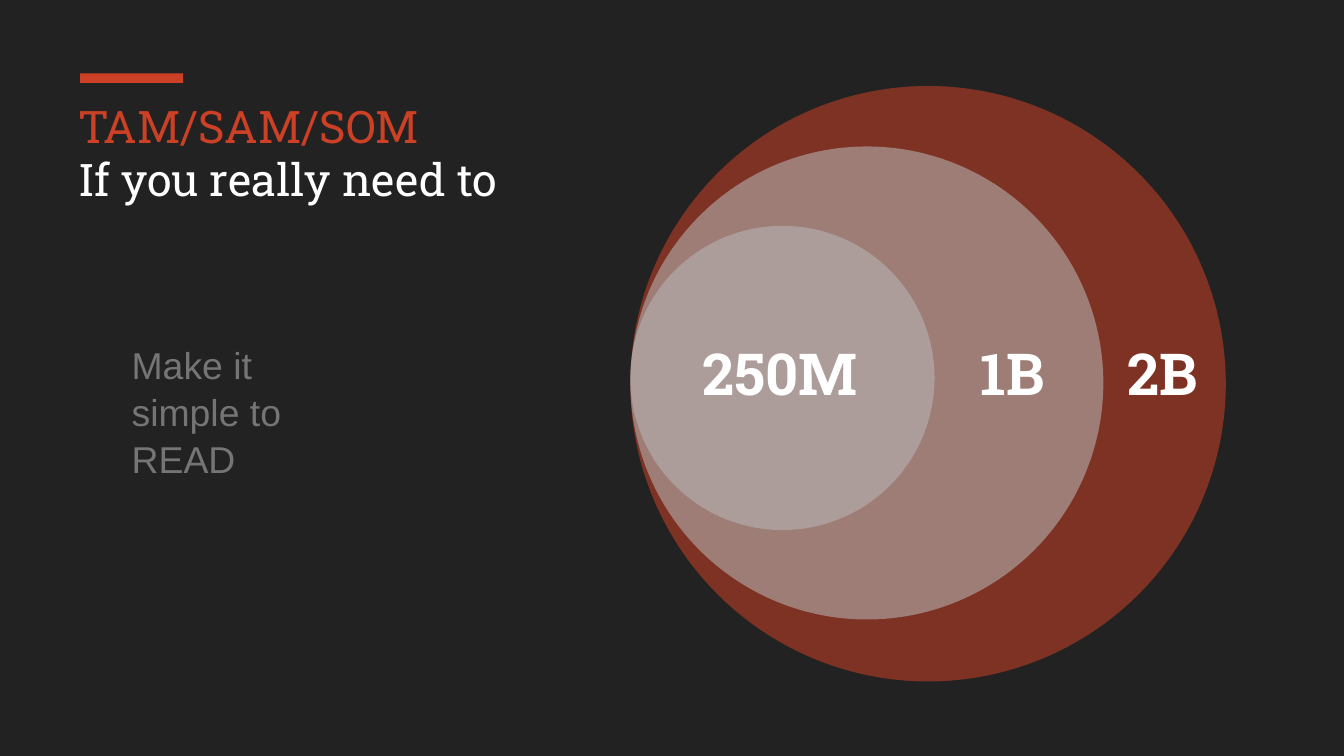
from lxml import etree
from pptx import Presentation
from pptx.dml.color import RGBColor
from pptx.enum import shapes, text
from pptx.oxml.ns import qn
from pptx.util import Pt

DARK = RGBColor(0x22, 0x22, 0x22)
RED = RGBColor(0xCC, 0x41, 0x25)
PALE = RGBColor(0xB7, 0xB7, 0xB7)
GRAY = RGBColor(0x75, 0x75, 0x75)
WHITE = RGBColor(0xFF, 0xFF, 0xFF)
SLAB = "Roboto Slab"

EDGE = 337.7  # left point that all the circles share
CIRCLES = [  # top, size, colour, opacity in percent
    (46.1, 319, RED, 54),
    (78.5, 253.4, PALE, 57),
    (121, 163, PALE, 57),
]
VALUES = [("2B", 596.9, 54.7), ("1B", 518.4, 50.4), ("250M", 369.4, 104.4)]


def add_fill(slide, kind, box, color, alpha=100):
    """Add a borderless shape; alpha is its opacity in percent."""
    shape = slide.shapes.add_shape(kind, *map(Pt, box))
    shape.shadow.inherit = False
    shape.line.fill.background()
    shape.fill.solid()
    shape.fill.fore_color.rgb = color
    if alpha < 100:
        tint = shape.fill._xPr.find(".//" + qn("a:srgbClr"))
        etree.SubElement(tint, qn("a:alpha")).set("val", str(alpha * 1000))


def set_font(para, name, size, color, bold=False):
    for run in para.runs:
        run.font.name = name
        run.font.size = Pt(size)
        run.font.color.rgb = color
        run.font.bold = bold


def add_title(slide, lines):
    title = slide.shapes.title
    title.left, title.top, title.width, title.height = map(
        Pt, (34.6, 45.4, 324.7, 83.5))
    frame = title.text_frame
    frame.word_wrap = True
    frame.auto_size = text.MSO_AUTO_SIZE.NONE
    frame.vertical_anchor = text.MSO_ANCHOR.TOP
    frame.margin_left = frame.margin_right = Pt(7.2)
    frame.margin_top = frame.margin_bottom = Pt(7.2)
    frame.text = "\n".join(line for line, _ in lines)
    for para, (_, color) in zip(frame.paragraphs, lines):
        para.alignment = text.PP_ALIGN.LEFT
        para.line_spacing = 1
        para.space_before = Pt(0)
        set_font(para, SLAB, 24, color)


def add_text(slide, words, box, wrap=True):
    frame = slide.shapes.add_textbox(*map(Pt, box)).text_frame
    frame.word_wrap = wrap
    frame.text = words
    return frame.paragraphs


def add_note(slide):
    box = (63.4, 178.6, 140, 104.4)
    for para in add_text(slide, "Make it simple to\nREAD", box):
        para.line_spacing = 1.05
        set_font(para, "Arial", 20, GRAY)


def add_value(slide, words, left, width):
    para, = add_text(slide, words, (left, 177.1, width, 44.6), wrap=False)
    set_font(para, SLAB, 31, WHITE, bold=True)


def main():
    deck = Presentation()
    deck.slide_width, deck.slide_height = Pt(720), Pt(405)
    slide = deck.slides.add_slide(deck.slide_layouts[5])
    slide.background.fill.solid()
    slide.background.fill.fore_color.rgb = DARK

    add_title(slide, [("TAM/SAM/SOM", RED), ("If you really need to", WHITE)])
    kinds = shapes.MSO_SHAPE
    add_fill(slide, kinds.RECTANGLE, (42.9, 39.3, 55.2, 5.2), RED)
    for top, size, color, alpha in CIRCLES:
        add_fill(slide, kinds.OVAL, (EDGE, top, size, size), color, alpha)
    add_note(slide)
    for words, left, width in VALUES:
        add_value(slide, words, left, width)
    deck.save("out.pptx")


if __name__ == "__main__":
    main()
